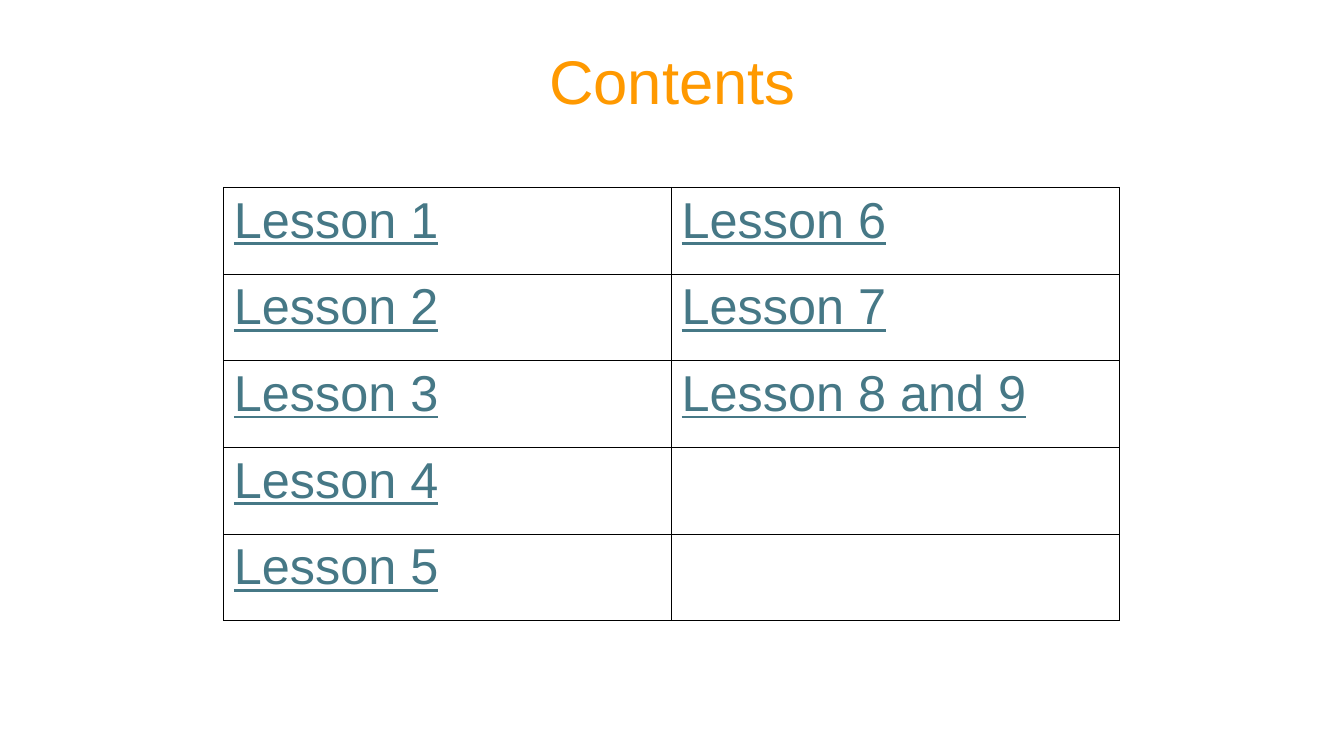
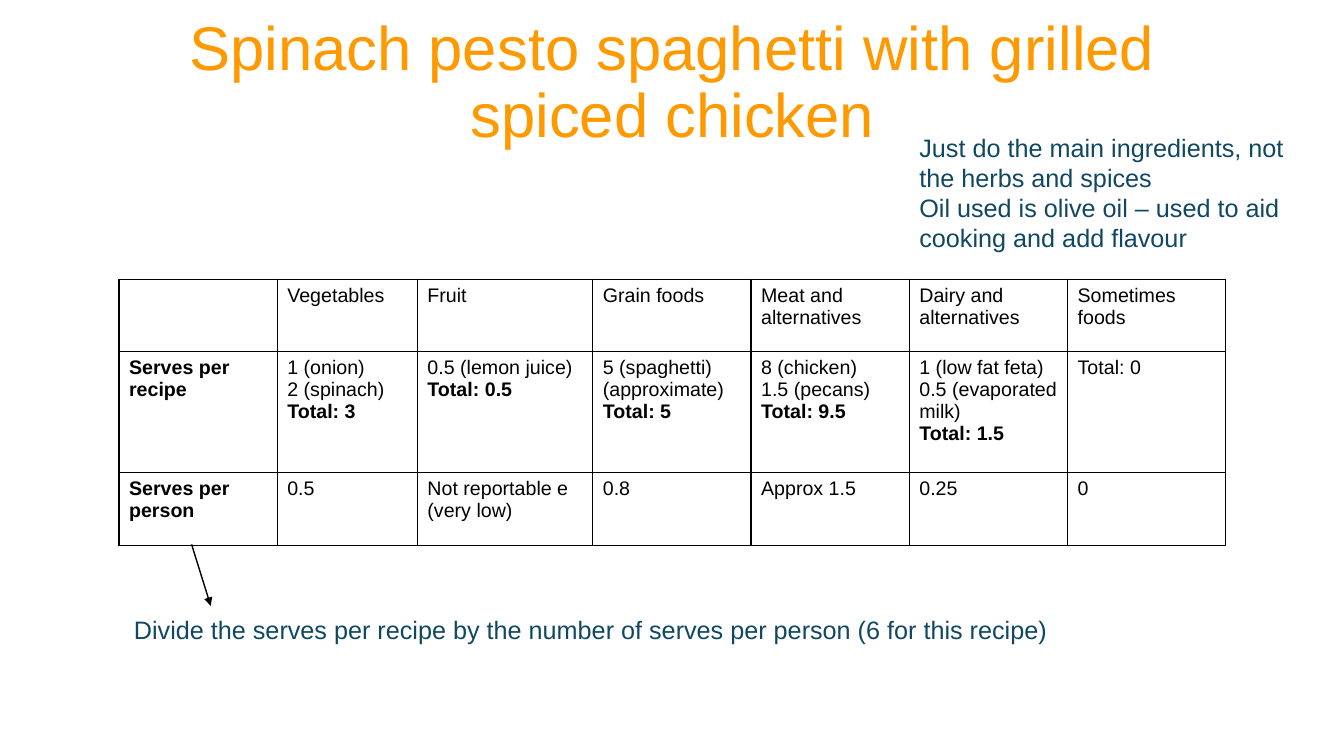
from lxml import etree
from pptx import Presentation
from pptx.dml.color import RGBColor
from pptx.enum.shapes import MSO_CONNECTOR
from pptx.enum.text import MSO_ANCHOR, MSO_AUTO_SIZE, PP_ALIGN
from pptx.oxml.ns import qn
from pptx.util import Inches, Pt

STRAIGHT = MSO_CONNECTOR.STRAIGHT
MIDDLE = MSO_ANCHOR.MIDDLE
CENTER = PP_ALIGN.CENTER
NO_FIT = MSO_AUTO_SIZE.NONE
FONT = "Arial"
TITLE_ONLY = 5
COLORS = {"title": "FF9900", "link": "467886", "note": "104862",
          "text": "000000", "line": "000000"}

LESSONS = [
    ["Lesson 1", "Lesson 6"],
    ["Lesson 2", "Lesson 7"],
    ["Lesson 3", "Lesson 8 and 9"],
    ["Lesson 4", ""],
    ["Lesson 5", ""],
]
SERVES = [
    ["", "Vegetables", "Fruit", "Grain foods", "Meat and alternatives",
     "Dairy and alternatives", "Sometimes foods"],
    ["Serves per recipe", "1 (onion)\n2 (spinach)\nTotal: 3",
     "0.5 (lemon juice)\nTotal: 0.5",
     "5 (spaghetti) (approximate)\nTotal: 5",
     "8 (chicken)\n1.5 (pecans)\nTotal: 9.5",
     "1 (low fat feta)\n0.5 (evaporated milk)\nTotal: 1.5", "Total: 0"],
    ["Serves per person", "0.5", "Not reportable e (very low)", "0.8",
     "Approx 1.5", "0.25", "0"],
]


def style(para, size, color, bold=False, underline=False):
    font = para.font
    font.name, font.size = FONT, Pt(size)
    font.bold, font.underline = bold, underline
    font.color.rgb = RGBColor.from_string(COLORS[color])


def add_slide(deck, title):
    slide = deck.slides.add_slide(deck.slide_layouts[TITLE_ONLY])
    head = slide.shapes.title
    head.left, head.top = Inches(0.92), Inches(0.11)
    head.width, head.height = Inches(11.5), Inches(1.45)
    frame = head.text_frame
    frame.text = title
    frame.word_wrap = True
    frame.auto_size = NO_FIT
    frame.vertical_anchor = MIDDLE
    para = frame.paragraphs[0]
    para.alignment, para.line_spacing = CENTER, 0.9
    style(para, 44, "title")
    return slide


def outline(cell):
    """Clear the cell's fill and rule all four sides."""
    cell.fill.background()
    props = cell._tc.get_or_add_tcPr()
    for spot, side in enumerate(("lnL", "lnR", "lnT", "lnB")):
        line = etree.Element(qn("a:" + side), w=str(Pt(1)))
        fill = etree.SubElement(line, qn("a:solidFill"))
        etree.SubElement(fill, qn("a:srgbClr"), val=COLORS["line"])
        props.insert(spot, line)


def add_grid(slide, left, top, widths, heights, data, paint):
    """Draw a ruled table; paint(para, col, is_total) styles each line."""
    table = slide.shapes.add_table(
        len(heights), len(widths), Inches(left), Inches(top),
        Inches(sum(widths)), Inches(sum(heights))).table
    table.first_row = table.horz_banding = False
    for col, width in zip(table.columns, widths):
        col.width = Inches(width)
    for row, height in zip(table.rows, heights):
        row.height = Inches(height)
    for r, texts in enumerate(data):
        for c, text in enumerate(texts):
            cell = table.cell(r, c)
            cell.text = text
            outline(cell)
            paras = cell.text_frame.paragraphs
            for i, para in enumerate(paras):
                paint(para, c, 0 < i == len(paras) - 1)


def add_note(slide, left, top, width, height, text, wrap=True):
    box = slide.shapes.add_textbox(
        Inches(left), Inches(top), Inches(width), Inches(height))
    frame = box.text_frame
    frame.word_wrap = wrap
    frame.text = text
    for para in frame.paragraphs:
        style(para, 18, "note")


def add_arrow(slide, start, end):
    arrow = slide.shapes.add_connector(
        STRAIGHT, *(Inches(n) for n in (*start, *end)))
    arrow.line.width = Pt(1)
    arrow.line.color.rgb = RGBColor.from_string(COLORS["line"])
    etree.SubElement(arrow.line._get_or_add_ln(), qn("a:tailEnd"),
                     type="triangle")
    etree.SubElement(arrow._element.spPr, qn("a:effectLst"))


def contents_slide(deck):
    def paint(para, col, total):
        style(para, 36, "link", underline=True)

    slide = add_slide(deck, "Contents")
    add_grid(slide, 2.22, 1.86, [4.44] * 2, [0.86] * 5, LESSONS, paint)


def recipe_slide(deck):
    def paint(para, col, total):
        style(para, 14, "text", bold=col == 0 or total)

    slide = add_slide(
        deck, "Spinach pesto spaghetti with grilled spiced chicken")
    widths = [1.57, 1.39, 1.74] + [1.57] * 4
    add_grid(slide, 1.18, 2.77, widths, [0.72, 1.2, 0.72], SERVES, paint)
    add_note(slide, 1.23, 6.05, 9.26, 0.4,
             "Divide the serves per recipe by the number of serves per "
             "person (6 for this recipe)", wrap=False)
    add_arrow(slide, (1.9, 5.4), (2.09, 6.01))
    add_note(slide, 9.02, 1.26, 4.2, 1.31,
             "Just do the main ingredients, not the herbs and spices\n"
             "Oil used is olive oil – used to aid cooking and add flavour")


def main():
    deck = Presentation()
    deck.slide_width, deck.slide_height = Inches(13.33), Inches(7.5)
    contents_slide(deck)
    recipe_slide(deck)
    deck.save("out.pptx")


if __name__ == "__main__":
    main()
